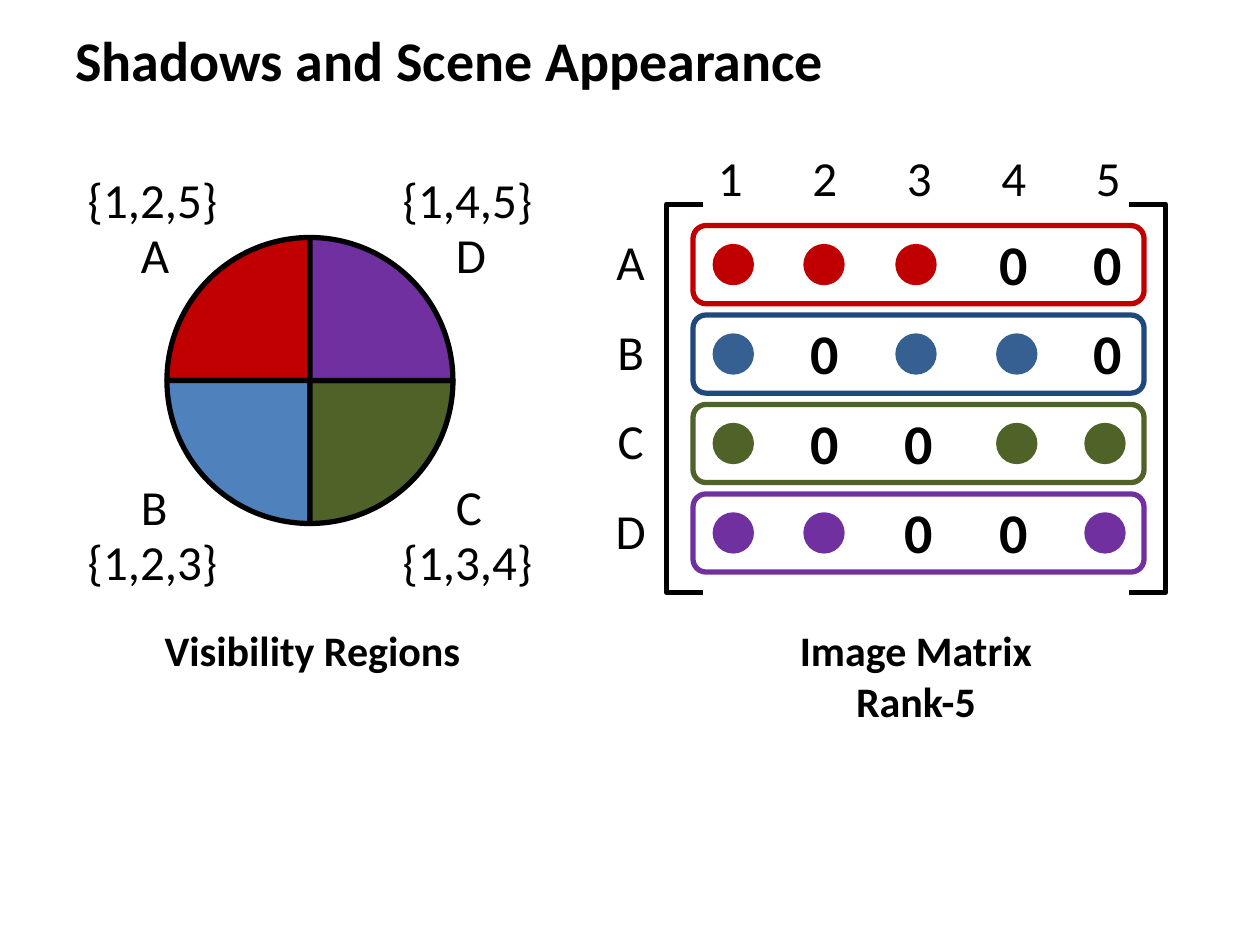
from pptx import Presentation
from pptx import util as u
from pptx.dml.color import RGBColor
from pptx.enum import shapes, text

COLS, ROWS = 100, 75
CELL = u.Inches(10) / COLS
COLORS = {
    "ink": "000000", "red": "C00000", "purple": "7030A0", "green": "4F6228",
    "sky": "4F81BD", "blue": "376092", "navy": "1F497D",
}
REGIONS = [
    ("A", 180, "red", "{1,2,5}", 0, 0),
    ("B", 90, "sky", "{1,2,3}", 0, 1),
    ("C", 0, "green", "{1,3,4}", 1, 1),
    ("D", 270, "purple", "{1,4,5}", 1, 0),
]
MATRIX = [
    ("A", "red", "red", "11100"),
    ("B", "blue", "navy", "10110"),
    ("C", "green", "green", "10011"),
    ("D", "purple", "purple", "11001"),
]
DOT_LEFTS = [3.8, 11, 18.3, 26.3, 33.3]


def grid(*values):
    """Turn grid units into EMU lengths."""
    return [round(v * CELL) for v in values]


def color(name):
    """Look up a named colour."""
    return RGBColor.from_string(COLORS[name])


def write(tf, content, size=28, bold=False, align=text.PP_ALIGN.CENTER):
    """Fill a text frame with one paragraph per line."""
    for i, line in enumerate(content.split("\n")):
        p = tf.add_paragraph() if i else tf.paragraphs[0]
        p.alignment = align
        r = p.add_run()
        r.text = line
        r.font.name, r.font.size, r.font.bold = "Calibri", u.Pt(size), bold
        r.font.color.rgb = color("ink")


def label(s, box, content, wrap=True, anchor=text.MSO_ANCHOR.TOP, **fmt):
    """Place a text box."""
    tf = s.shapes.add_textbox(*grid(*box)).text_frame
    tf.word_wrap, tf.vertical_anchor = wrap, anchor
    write(tf, content, **fmt)


def paint(sp, line, width, fill=None):
    """Set outline and fill of a shape."""
    sp.shadow.inherit = False
    sp.line.color.rgb, sp.line.width = color(line), u.Pt(width)
    if fill:
        sp.fill.solid()
        sp.fill.fore_color.rgb = color(fill)
    else:
        sp.fill.background()


def shape(s, kind, box, line, width, fill=None):
    """Place a painted preset shape."""
    sp = s.shapes.add_shape(kind, *grid(*box))
    paint(sp, line, width, fill)
    return sp


def table(s, box, rows, **fmt):
    """Place an unfilled table holding rows of strings."""
    tbl = s.shapes.add_table(len(rows), len(rows[0]), *grid(*box)).table
    for i, row in enumerate(rows):
        for j, value in enumerate(row):
            cell = tbl.cell(i, j)
            cell.fill.background()
            if value:
                write(cell.text_frame, value, **fmt)


def bracket(s, x, y, reach, h):
    """Draw a square bracket whose spine stands at x."""
    (x0, y0), (x1, y1) = grid(x, y), grid(x + reach, y + h)
    fb = s.shapes.build_freeform(x1, y0)
    fb.add_line_segments([(x0, y0), (x0, y1), (x1, y1)], close=False)
    paint(fb.convert_to_shape(), "ink", 3)


def visibility_regions(s, x, y, w, h):
    """Place the quartered disc with its region labels."""
    d, set_w, name_w, text_h = 22.7, 14.2, 3.8, 5.7
    for name, start, fill, members, right, low in REGIONS:
        pie = shape(s, shapes.MSO_SHAPE.PIE,
                    (x + (w - d) / 2, y + (h - d) / 2, d, d), "ink", 3, fill)
        pie.adjustments[0] = start * 0.6
        pie.adjustments[1] = (start + 90) % 360 * 0.6
        left = x + right * (w - set_w)
        name_y = y + (h - 10.1 if low else 4.3)
        label(s, (left + (set_w - name_w) / 2, name_y, name_w, text_h),
              name, wrap=False)
        label(s, (left, y + low * (h - text_h), set_w, text_h), members)
    label(s, (x + 4.4, y + h + 1.7, 30.8, 5), "Visibility Regions",
          size=24, bold=True)


def image_matrix(s, x, y, w, h):
    """Place the bracketed matrix with its row and column heads."""
    pitch = 7.1
    height = pitch * len(MATRIX)
    table(s, (x + 1.3, y - 4.8, 37.5, 5.5), ["12345"])
    table(s, (x - 6.2, y + 1.9, 6.7, height), [row[0] for row in MATRIX])
    zeros = [["0" if bit == "0" else "" for bit in row[3]] for row in MATRIX]
    table(s, (x + 1.3, y + 1.7, 37.5, height), zeros, size=32, bold=True)
    for i, (_, fill, line, bits) in enumerate(MATRIX):
        top = y + 1.7 + i * pitch
        for left, bit in zip(DOT_LEFTS, bits):
            if bit == "1":
                shape(s, shapes.MSO_SHAPE.OVAL, (x + left, top + 1.6, 3, 3),
                      fill, 2, fill)
        shape(s, shapes.MSO_SHAPE.ROUNDED_RECTANGLE,
              (x + 2.1, top, 35.8, 6.2), line, 3)
    bracket(s, x, y, 2.9, h)
    bracket(s, x + w, y, -2.9, h)
    label(s, (x + w / 2 - 12.5, y + h + 2.1, 25, 9.1),
          "Image Matrix\nRank-5", size=24, bold=True)


def main():
    """Build and save the slide."""
    prs = Presentation()
    prs.slide_width, prs.slide_height = grid(COLS, ROWS)
    s = prs.slides.add_slide(prs.slide_layouts[6])
    label(s, (5, 0.8, 90, 7.8), "Shadows and Scene Appearance", size=32,
          bold=True, align=text.PP_ALIGN.LEFT, anchor=text.MSO_ANCHOR.MIDDLE)
    visibility_regions(s, 5, 13, 39.2, 34.4)
    image_matrix(s, 52.9, 16.2, 39.6, 30.8)
    prs.save("out.pptx")


if __name__ == "__main__":
    main()
